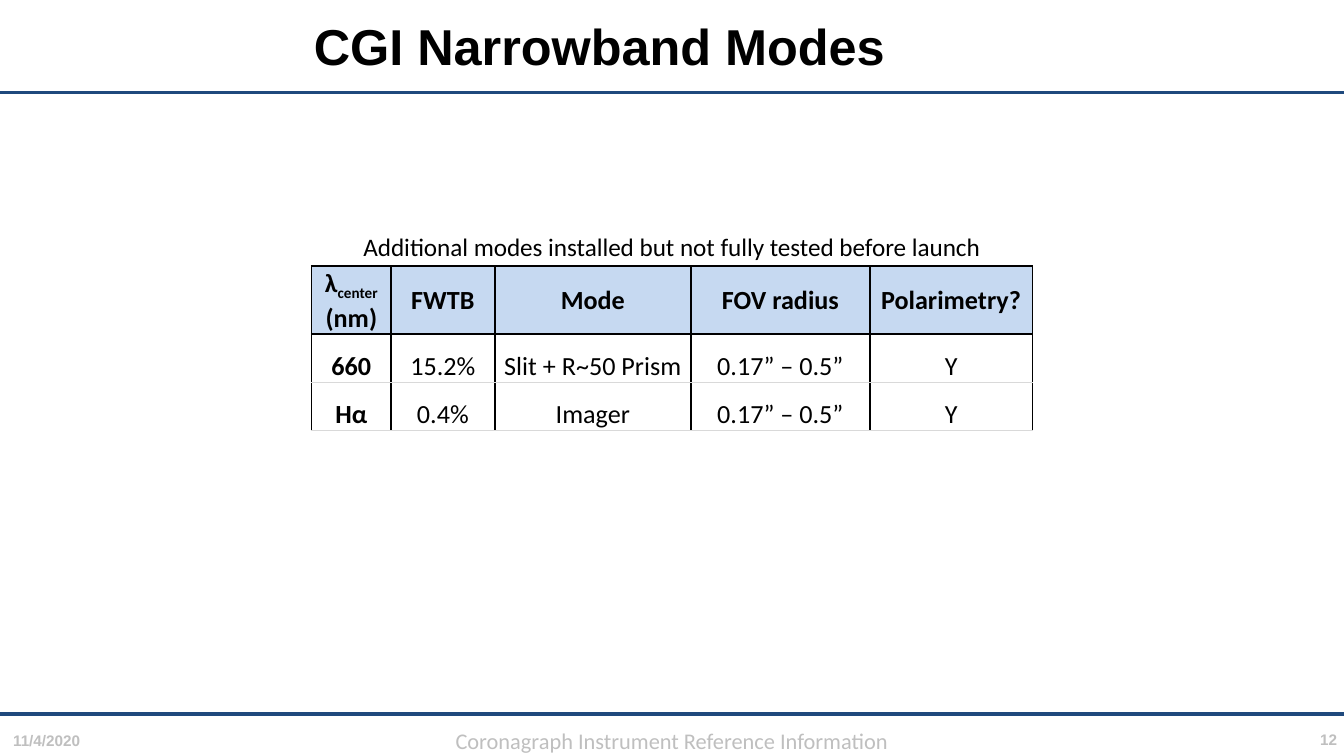
from lxml.etree import SubElement
from pptx import Presentation
from pptx.dml.color import RGBColor
from pptx.enum.shapes import MSO_CONNECTOR
from pptx.enum.text import MSO_ANCHOR, PP_ALIGN
from pptx.oxml import parse_xml
from pptx.oxml.ns import nsdecls, qn
from pptx.util import Cm, Pt

BLACK = RGBColor(0x00, 0x00, 0x00)
NAVY = RGBColor(0x1F, 0x49, 0x7D)
PALE_BLUE = RGBColor(0xC6, 0xD9, 0xF1)
GREY = RGBColor(0xBF, 0xBF, 0xBF)
LIGHT_GREY = RGBColor(0xD9, 0xD9, 0xD9)

SLIDE_WIDTH, SLIDE_HEIGHT = 25.4, 14.29
RULE_HEIGHTS = [1.75, 13.49]

TITLE_FONT = {"name": "Arial", "size": Pt(27), "bold": True}
CAPTION_FONT = {"name": "Calibri", "size": Pt(13.5), "bold": False}
FOOTER_FONT = {"name": "Calibri", "size": Pt(12), "bold": False}
SMALL_FONT = {"name": "Arial", "size": Pt(8.2), "bold": True}
STRONG_FONT = {"name": "Calibri", "size": Pt(14), "bold": True}
VALUE_FONT = {**STRONG_FONT, "bold": False}

DEFAULT_INSETS = (0.25, 0.13)
LABELS = [
    ("12", (22.96, 13.72, 2.44, 0.48), PP_ALIGN.RIGHT, SMALL_FONT, GREY, (0.13, 0.08)),
    ("11/4/2020", (0, 13.69, 5.31, 0.61), PP_ALIGN.LEFT, SMALL_FONT, GREY, DEFAULT_INSETS),
    ("Coronagraph Instrument Reference Information", (0, 13.61, SLIDE_WIDTH, 0.76),
     PP_ALIGN.CENTER, FOOTER_FONT, GREY, DEFAULT_INSETS),
    ("Additional modes installed but not fully tested before launch",
     (5.89, 4.24, 13.61, 0.84), PP_ALIGN.CENTER, CAPTION_FONT, BLACK, DEFAULT_INSETS),
    ("CGI Narrowband Modes", (3.81, 0.15, 15.04, 1.42), PP_ALIGN.CENTER,
     TITLE_FONT, BLACK, DEFAULT_INSETS),
]

SUBSCRIPT = "center"
MODES = [
    [("λ", SUBSCRIPT, " (nm)"), ("FWTB",), ("Mode",), ("FOV radius",), ("Polarimetry?",)],
    [("660",), ("15.2%",), ("Slit + R~50 Prism",), ("0.17” – 0.5”",), ("Y",)],
    [("Hα",), ("0.4%",), ("Imager",), ("0.17” – 0.5”",), ("Y",)],
]
TABLE_LEFT, TABLE_TOP = 5.89, 5.03
COLUMN_WIDTHS = [1.5, 1.96, 3.71, 3.38, 3.07]
ROW_HEIGHTS = [1.17, 0.91, 0.91]


def apply(target, values):
    for key, value in values.items():
        setattr(target, key, value)


def write(paragraph, pieces, align, font, color):
    paragraph.alignment = align
    for piece in pieces:
        run = paragraph.add_run()
        run.text = piece
        apply(run.font, font)
        run.font.color.rgb = color
        if piece == SUBSCRIPT:
            run._r.get_or_add_rPr().set("baseline", "-25000")


def add_label(slide, text, place, align, font, color, insets):
    frame = slide.shapes.add_textbox(*map(Cm, place)).text_frame
    across, down = map(Cm, insets)
    apply(frame, {
        "word_wrap": True, "vertical_anchor": MSO_ANCHOR.TOP,
        "margin_left": across, "margin_right": across,
        "margin_top": down, "margin_bottom": down,
    })
    if font is TITLE_FONT:
        frame.vertical_anchor = MSO_ANCHOR.MIDDLE
    write(frame.paragraphs[0], [text], align, font, color)


def add_rule(slide, height):
    rule = slide.shapes.add_connector(
        MSO_CONNECTOR.STRAIGHT, Cm(0), Cm(height), Cm(SLIDE_WIDTH), Cm(height))
    rule.line.color.rgb = NAVY
    rule.line.width = Pt(2)
    SubElement(rule._element.spPr, qn("a:effectLst"))


def set_borders(cell, top, bottom):
    sides = {"lnL": BLACK, "lnR": BLACK, "lnT": top, "lnB": bottom}
    properties = cell._tc.get_or_add_tcPr()
    for position, (side, color) in enumerate(sides.items()):
        properties.insert(position, parse_xml(
            f'<a:{side} {nsdecls("a")} w="{Pt(1)}"><a:solidFill>'
            f'<a:srgbClr val="{color}"/></a:solidFill></a:{side}>'))


def add_modes(slide):
    modes = slide.shapes.add_table(
        len(MODES), len(COLUMN_WIDTHS), Cm(TABLE_LEFT), Cm(TABLE_TOP),
        Cm(sum(COLUMN_WIDTHS)), Cm(sum(ROW_HEIGHTS))).table
    for column, width in zip(modes.columns, COLUMN_WIDTHS):
        column.width = Cm(width)
    for row, height in zip(modes.rows, ROW_HEIGHTS):
        row.height = Cm(height)
    for i, entries in enumerate(MODES):
        header = i == 0
        for j, pieces in enumerate(entries):
            cell = modes.cell(i, j)
            apply(cell, {
                "margin_left": Cm(0.02), "margin_right": Cm(0.02),
                "margin_top": Cm(0.02), "margin_bottom": Cm(0),
                "vertical_anchor": MSO_ANCHOR.MIDDLE if header else MSO_ANCHOR.BOTTOM,
            })
            if header:
                cell.fill.solid()
                cell.fill.fore_color.rgb = PALE_BLUE
            else:
                cell.fill.background()
            set_borders(cell, BLACK if i < 2 else LIGHT_GREY,
                        BLACK if header else LIGHT_GREY)
            write(cell.text_frame.paragraphs[0], pieces, PP_ALIGN.CENTER,
                  STRONG_FONT if header or j == 0 else VALUE_FONT, BLACK)


def main():
    deck = Presentation()
    apply(deck, {"slide_width": Cm(SLIDE_WIDTH), "slide_height": Cm(SLIDE_HEIGHT)})
    slide = deck.slides.add_slide(deck.slide_layouts[6])
    for height in RULE_HEIGHTS:
        add_rule(slide, height)
    for label in LABELS:
        add_label(slide, *label)
    add_modes(slide)
    deck.save("out.pptx")


if __name__ == "__main__":
    main()
